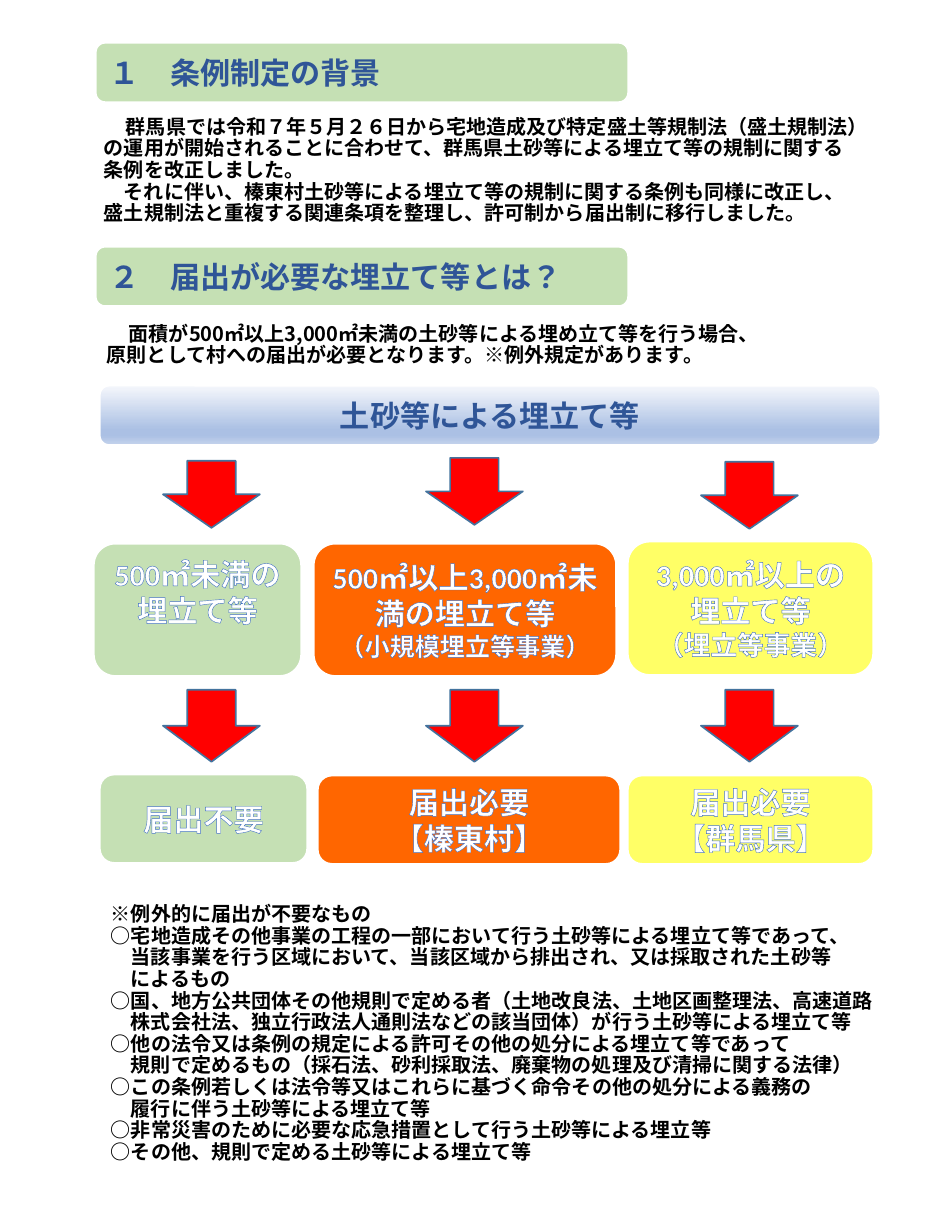
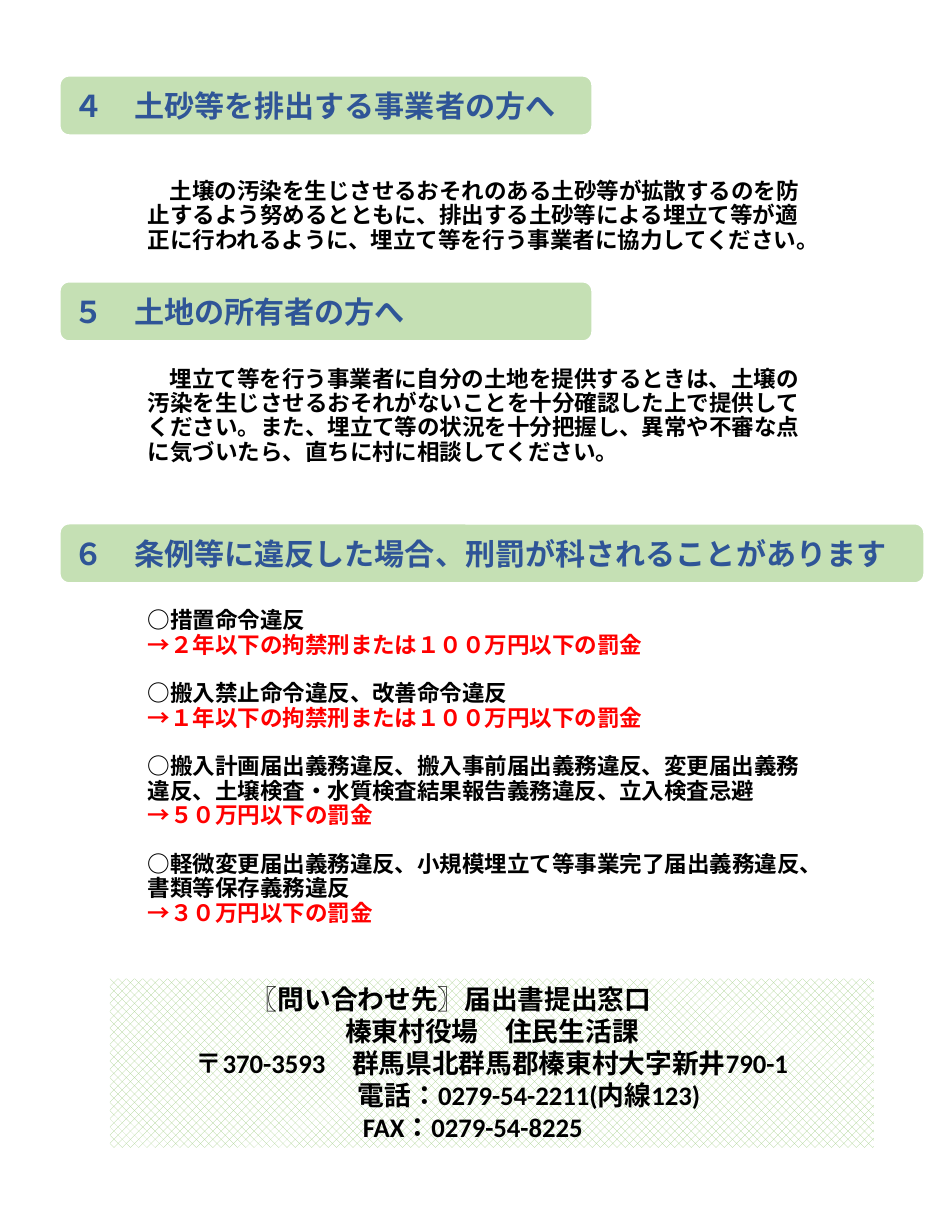
from copy import deepcopy
from pptx import Presentation
from pptx.dml.color import RGBColor
from pptx.enum.dml import MSO_PATTERN
from pptx.enum.shapes import MSO_SHAPE
from pptx.enum.text import MSO_ANCHOR, PP_ALIGN
from pptx.oxml import parse_xml
from pptx.oxml.ns import nsdecls, qn
from pptx.util import Cm, Pt

PX = 7595
SANS, CJK = "Calibri", "Noto Sans CJK JP"
GREEN, BLUE, ORANGE, YELLOW = "C5E0B4", "2F5597", "FF6600", "FFFF66"
RED, WHITE, BLACK, EDGE = "FF0000", "FFFFFF", "000000", "4472C4"

HEADS = [
    [("１　条例制定の背景", (95, 42, 534, 61)),
     ("２　届出が必要な埋立て等とは？", (95, 246, 534, 61))],
    [("４　土砂等を排出する事業者の方へ", (59, 75, 534, 61)),
     ("５　土地の所有者の方へ", (59, 281, 534, 61)),
     ("６　条例等に違反した場合、刑罰が科されることがあります", (59, 523, 866, 61))],
]

FIRST = {"indent": 22}
BACK = [
    ("群馬県では令和７年５月２６日から宅地造成及び特定盛土等規制法（盛土規制法）の運用が開始されることに合わせて、群馬県土砂等による埋立て等の規制に関する", FIRST),
    "条例を改正しました。",
    ("それに伴い、榛東村土砂等による埋立て等の規制に関する条例も同様に改正し、", {"indent": 20}),
    "盛土規制法と重複する関連条項を整理し、許可制から届出制に移行しました。",
]
NEED = [("面積が500㎡以上3,000㎡未満の土砂等による埋め立て等を行う場合、原則として村への届出が必要となります。※例外規定があります。", FIRST)]
HANG = {"left": 20, "indent": -20}
EXEMPT = ["※例外的に届出が不要なもの"] + [(t, HANG) for t in (
    "○宅地造成その他事業の工程の一部において行う土砂等による埋立て等であって、\v当該事業を行う区域において、当該区域から排出され、又は採取された土砂等\vによるもの",
    "○国、地方公共団体その他規則で定める者（土地改良法、土地区画整理法、高速道路\v株式会社法、独立行政法人通則法などの該当団体）が行う土砂等による埋立て等",
    "○他の法令又は条例の規定による許可その他の処分による埋立て等であって\v規則で定めるもの（採石法、砂利採取法、廃棄物の処理及び清掃に関する法律）",
    "○この条例若しくは法令等又はこれらに基づく命令その他の処分による義務の\v履行に伴う土砂等による埋立て等",
    "○非常災害のために必要な応急措置として行う土砂等による埋立等",
    "○その他、規則で定める土砂等による埋立て等",
)]
EMIT = [("土壌の汚染を生じさせるおそれのある土砂等が拡散するのを防止するよう努めるとともに、排出する土砂等による埋立て等が適正に行われるように、埋立て等を行う事業者に協力してください。", FIRST)]
OWNER = [("埋立て等を行う事業者に自分の土地を提供するときは、土壌の汚染を生じさせるおそれがないことを十分確認した上で提供してください。また、埋立て等の状況を十分把握し、異常や不審な点に気づいたら、直ちに村に相談してください。", FIRST)]
FINES = [
    ("○措置命令違反", "→２年以下の拘禁刑または１００万円以下の罰金"),
    ("○搬入禁止命令違反、改善命令違反", "→１年以下の拘禁刑または１００万円以下の罰金"),
    ("○搬入計画届出義務違反、搬入事前届出義務違反、変更届出義務違反、土壌検査・水質検査結果報告義務違反、立入検査忌避", "→５０万円以下の罰金"),
    ("○軽微変更届出義務違反、小規模埋立て等事業完了届出義務違反、書類等保存義務違反", "→３０万円以下の罰金"),
]
BODIES = [
    [(BACK, 12, (92, 98, 797, 133)), (NEED, 12, (95, 312, 680, 61)),
     (EXEMPT, 12, (99, 896, 811, 274))],
    [(EMIT, 13.5, (136, 153, 680, 106)), (OWNER, 13.5, (136, 359, 680, 112)),
     ([line for i, (act, fine) in enumerate(FINES) for line in (
         (act, {"before": 14.6 if i else 0}), (fine, {"color": RED}))],
      13.5, (136, 591, 680, 341))],
]

FLOW = [
    {"fill": GREEN, "size": (93, 543, 209, 134), "size_low": (99, 774, 209, 90),
     "kind": ["500㎡未満の", "埋立て等"], "duty": ["届出不要"], "foot": 42,
     "arrow": (163, 461)},
    {"fill": ORANGE, "size": (313, 543, 304, 134), "size_low": (317, 775, 304, 90),
     "kind": ["500㎡以上3,000㎡未満の埋立て等", ("（小規模埋立等事業）", {"size": 15})],
     "duty": ["届出必要", "【榛東村】"], "foot": 6, "arrow": (426, 458)},
    {"fill": YELLOW, "size": (627, 541, 247, 135), "size_low": (627, 775, 247, 90),
     "kind": ["3,000㎡以上の", "埋立て等", ("（埋立等事業）", {"size": 16})],
     "duty": ["届出必要", "【群馬県】"], "foot": 6, "arrow": (701, 462)},
]
STOPS = [(0, "F6F8FC"), (74, "ABC0E4"), (83, "ABC0E4"), (100, "C7D5ED")]
MID = {"align": PP_ALIGN.CENTER}
DESK = [
    ("〖問い合わせ先〗届出書提出窓口", {"left": 134}),
    ("榛東村役場　住民生活課", MID),
    ("〒370-3593　群馬県北群馬郡榛東村大字新井790-1", MID),
    ("電話：0279-54-2211(内線123)", {"left": 241}),
    ("FAX：0279-54-8225", {"left": 246}),
]


def rgb(code):
    return RGBColor.from_string(code)


def emu(box):
    return [n * PX for n in box]


def style(run, size, font, color, edge):
    run.font.size, run.font.bold, run.font.name = Pt(size), True, font
    run.font.color.rgb = rgb(color)
    props = run.font._element
    props.set("lang", "ja-JP")
    props.set("altLang", "en-US")
    props.append(parse_xml(f'<a:ea {nsdecls("a")} typeface="{CJK}"/>'))
    if edge:
        props.insert(0, parse_xml(
            f'<a:ln {nsdecls("a")} w="10160"><a:solidFill>'
            f'<a:srgbClr val="{edge}"/></a:solidFill></a:ln>'))
    return props


def line(par, text, size=18, font=SANS, color=BLACK, edge=None, pitch=1.2,
         align=PP_ALIGN.LEFT, left=0, indent=0, before=0):
    par.text, par.alignment = text, align
    par.line_spacing, par.space_before = Pt(size * pitch), Pt(before)
    props = par._p.get_or_add_pPr()
    props.set("marL", str(left * PX))
    props.set("indent", str(indent * PX))
    for run in par.runs:
        last = style(run, size, font, color, edge)
    for gap in par._p.findall(qn("a:br")):
        gap.insert(0, deepcopy(last))


def write(shape, lines, anchor=MSO_ANCHOR.MIDDLE, pad=(12, 6, 12, 6), **fmt):
    frame = shape.text_frame
    frame.word_wrap, frame.vertical_anchor = True, anchor
    (frame.margin_left, frame.margin_top,
     frame.margin_right, frame.margin_bottom) = emu(pad)
    for i, item in enumerate(lines):
        text, extra = (item, {}) if isinstance(item, str) else item
        par = frame.add_paragraph() if i else frame.paragraphs[0]
        line(par, text, **{**fmt, **extra})


def block(slide, box, fill=None, kind=MSO_SHAPE.ROUNDED_RECTANGLE, edge=WHITE, width=2):
    shape = slide.shapes.add_shape(kind, *emu(box))
    shape.shadow.inherit = False
    if fill:
        shape.fill.solid()
        shape.fill.fore_color.rgb = rgb(fill)
    if edge:
        shape.line.color.rgb = rgb(edge)
        shape.line.width = Pt(width)
    else:
        shape.line.fill.background()
    return shape


def base(deck, heads, bodies):
    slide = deck.slides.add_slide(deck.slide_layouts[6])
    for text, box in heads:
        write(block(slide, box, GREEN), [text], color=BLUE)
    for lines, size, box in bodies:
        write(slide.shapes.add_textbox(*emu(box)), lines, MSO_ANCHOR.BOTTOM,
              size=size, font=CJK, pitch=1.08)
    return slide


def flow(slide):
    top = block(slide, (99, 385, 782, 61))
    top.fill.background()
    stops = "".join(f'<a:gs pos="{at * 1000}"><a:srgbClr val="{code}"/></a:gs>'
                    for at, code in STOPS)
    props = top._element.spPr
    props.replace(props.find(qn("a:noFill")), parse_xml(
        f'<a:gradFill {nsdecls("a")} rotWithShape="1"><a:gsLst>{stops}</a:gsLst>'
        '<a:lin ang="5400000" scaled="0"/></a:gradFill>'))
    write(top, ["土砂等による埋立て等"], color=BLUE, **MID)
    look = {"color": WHITE, "edge": EDGE, **MID}
    for col in FLOW:
        write(block(slide, col["size"], col["fill"]), col["kind"],
              pad=(12, 6, 12, col["foot"]), **look)
        write(block(slide, col["size_low"], col["fill"]), col["duty"], **look)
        left, high = col["arrow"]
        for y, tall in ((high, 67), (690, 72)):
            block(slide, (left, y, 97, tall), RED, MSO_SHAPE.DOWN_ARROW, "43739E", 1)


def desk(slide):
    card = block(slide, (110, 979, 764, 169), kind=MSO_SHAPE.RECTANGLE, edge=None)
    card.fill.patterned()
    card.fill.pattern = MSO_PATTERN.PERCENT_50
    card.fill.fore_color.rgb = rgb("A9D18E")
    card.fill.back_color.rgb = rgb(WHITE)
    write(card, DESK, MSO_ANCHOR.TOP, (7, 4, 7, 4), size=16)


def main():
    deck = Presentation()
    deck.slide_width, deck.slide_height = Cm(20), Cm(26)
    for heads, bodies, draw in zip(HEADS, BODIES, (flow, desk)):
        draw(base(deck, heads, bodies))
    deck.save("out.pptx")


if __name__ == "__main__":
    main()
